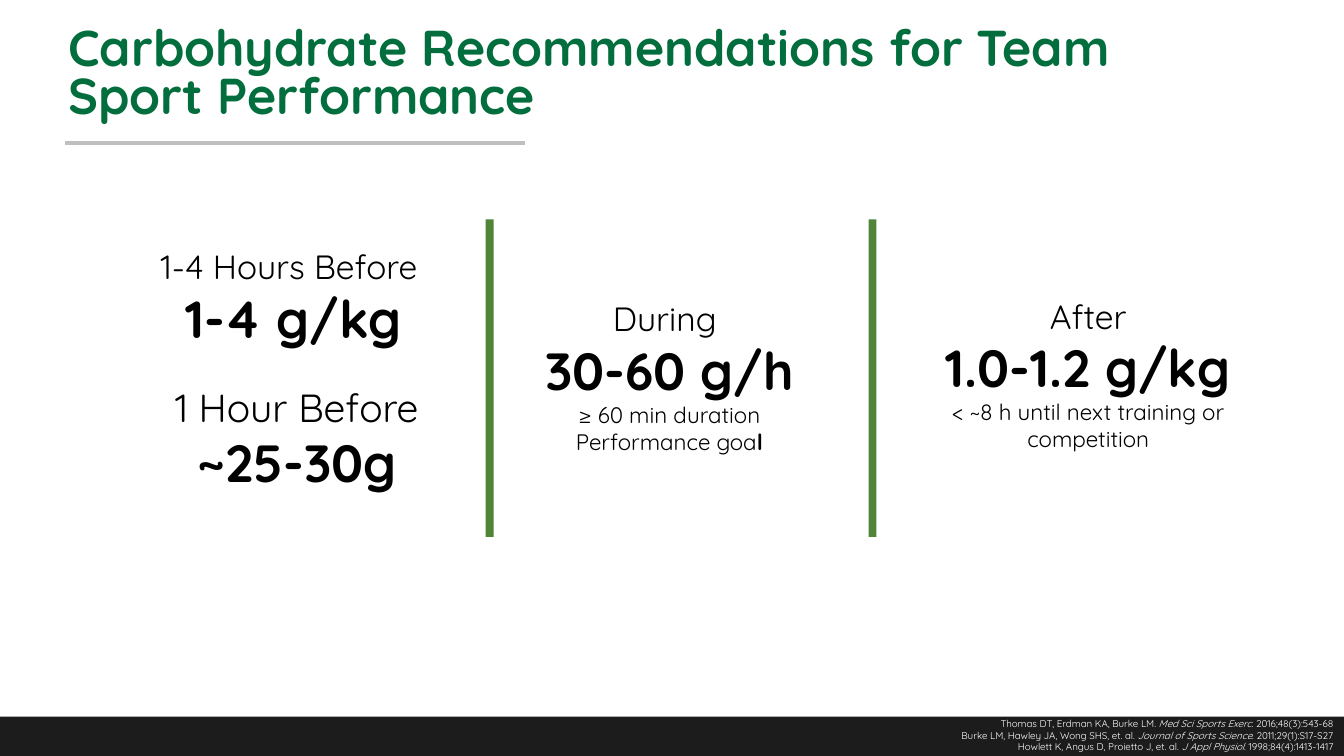
import pptx
import pptx.dml.color
import pptx.enum.shapes
import pptx.enum.text
import pptx.oxml.ns
import pptx.util
from lxml import etree
from pptx.util import Cm

COLOURS = {"title": "036E3D", "text": "000000", "light": "FFFFFF",
           "footer": "1C1C1C", "divider": "508437", "rule": "BFBFBF"}
ALIGN = pptx.enum.text.PP_ALIGN
ANCHOR = pptx.enum.text.MSO_ANCHOR
FONT = "Quicksand"
AMOUNT_SIZE = 37.3
NOTE_SIZE = 16

REFERENCES = [
    ("Thomas DT, Erdman KA, Burke LM. ", "Med Sci Sports Exerc", ". 2016;48(3):543-68"),
    ("Burke LM, Hawley JA, Wong SHS, et. al. ", "Journal of Sports Science",
     ". 2011;29(1):S17-S27"),
    ("Howlett K, Angus D, Proietto J, et. al. ", "J Appl Physiol", ". 1998;84(4):1413-1417"),
]


def rgb(name):
    """Return the named colour."""
    return pptx.dml.color.RGBColor.from_string(COLOURS[name])


def add_span(para, text, *, size, colour="text", bold=False, italic=False):
    """Append formatted text to a paragraph."""
    span = para.add_run()
    span.text = text
    span.font.name = FONT
    span.font.size = pptx.util.Pt(size)
    span.font.color.rgb = rgb(colour)
    span.font.bold = bold
    span.font.italic = italic


def add_box(page, left, top, width, height, anchor=ANCHOR.TOP):
    """Add an empty wrapping text box, measured in centimetres."""
    box = page.shapes.add_textbox(Cm(left), Cm(top), Cm(width), Cm(height))
    box.text_frame.word_wrap = True
    box.text_frame.vertical_anchor = anchor
    return box.text_frame


def add_para(frame, align):
    """Return the first paragraph while it is empty, else a new one."""
    para = frame.paragraphs[0]
    if para.runs:
        para = frame.add_paragraph()
    para.alignment = align
    return para


def add_bar(page, left, top, width, height, colour):
    """Add a plain filled rectangle."""
    bar = page.shapes.add_shape(pptx.enum.shapes.MSO_SHAPE.RECTANGLE,
                                Cm(left), Cm(top), Cm(width), Cm(height))
    bar.shadow.inherit = False
    bar.fill.solid()
    bar.fill.fore_color.rgb = rgb(colour)
    bar.line.fill.background()


def add_rule(page, left, right, y):
    """Add the horizontal rule under the title."""
    rule = page.shapes.add_connector(pptx.enum.shapes.MSO_CONNECTOR.STRAIGHT,
                                     Cm(left), Cm(y), Cm(right), Cm(y))
    rule.line.color.rgb = rgb("rule")
    rule.line.width = pptx.util.Pt(3)
    etree.SubElement(rule._element.spPr, pptx.oxml.ns.qn("a:effectLst"))


def add_title(page, text):
    """Add the slide title."""
    para = add_para(add_box(page, 1.47, 0.74, 29.13, 2.36, ANCHOR.MIDDLE), ALIGN.LEFT)
    para.line_spacing = 0.8
    add_span(para, text, size=36, colour="title", bold=True)


def add_advice(page, area, timing, amount, timing_size=24):
    """Add a timing with its amount below and return the text frame."""
    frame = add_box(page, *area)
    frame.auto_size = pptx.enum.text.MSO_AUTO_SIZE.SHAPE_TO_FIT_TEXT
    para = add_para(frame, ALIGN.CENTER)
    add_span(para, timing, size=timing_size)
    para.add_line_break()
    add_span(para, amount, size=AMOUNT_SIZE, bold=True)
    return frame


def add_note(frame, text):
    """Add a small centred line under an amount and return it."""
    para = add_para(frame, ALIGN.CENTER)
    add_span(para, text, size=NOTE_SIZE)
    return para


def add_references(page):
    """Add the footer bar with its sources."""
    add_bar(page, 0, 18.06, 33.87, 0.99, "footer")
    frame = add_box(page, 12.67, 17.96, 21.18, 1.14)
    for reference in REFERENCES:
        para = add_para(frame, ALIGN.RIGHT)
        for text, italic in zip(reference, (False, True, False)):
            add_span(para, text, size=7, colour="light", italic=italic)


def main():
    """Build the slide and save it."""
    deck = pptx.Presentation()
    deck.slide_width, deck.slide_height = Cm(33.87), Cm(19.05)
    page = deck.slides.add_slide(deck.slide_layouts[6])
    add_references(page)
    add_title(page, "Carbohydrate Recommendations for Team Sport Performance")
    add_rule(page, 1.65, 13.23, 3.61)

    add_advice(page, (3.78, 6.07, 7.24, 2.87), "1-4 Hours Before ", "1-4 g/kg")
    add_advice(page, (3.96, 9.53, 7.04, 3.05), "1 Hour Before", "~25-30g", timing_size=28)

    during = add_advice(page, (13.21, 7.39, 7.32, 4.24), "During ", "30-60 g/h")
    add_note(during, "≥ 60 min duration")
    add_span(add_note(during, "Performance goa"), "l", size=NOTE_SIZE, bold=True)

    after = add_advice(page, (23.27, 7.32, 8.31, 4.24), "After", "1.0-1.2 g/kg")
    add_note(after, "< ~8 h until next training or competition")

    for left in (12.24, 21.89):
        add_bar(page, left, 5.53, 0.2, 8, "divider")
    deck.save("out.pptx")


if __name__ == "__main__":
    main()
